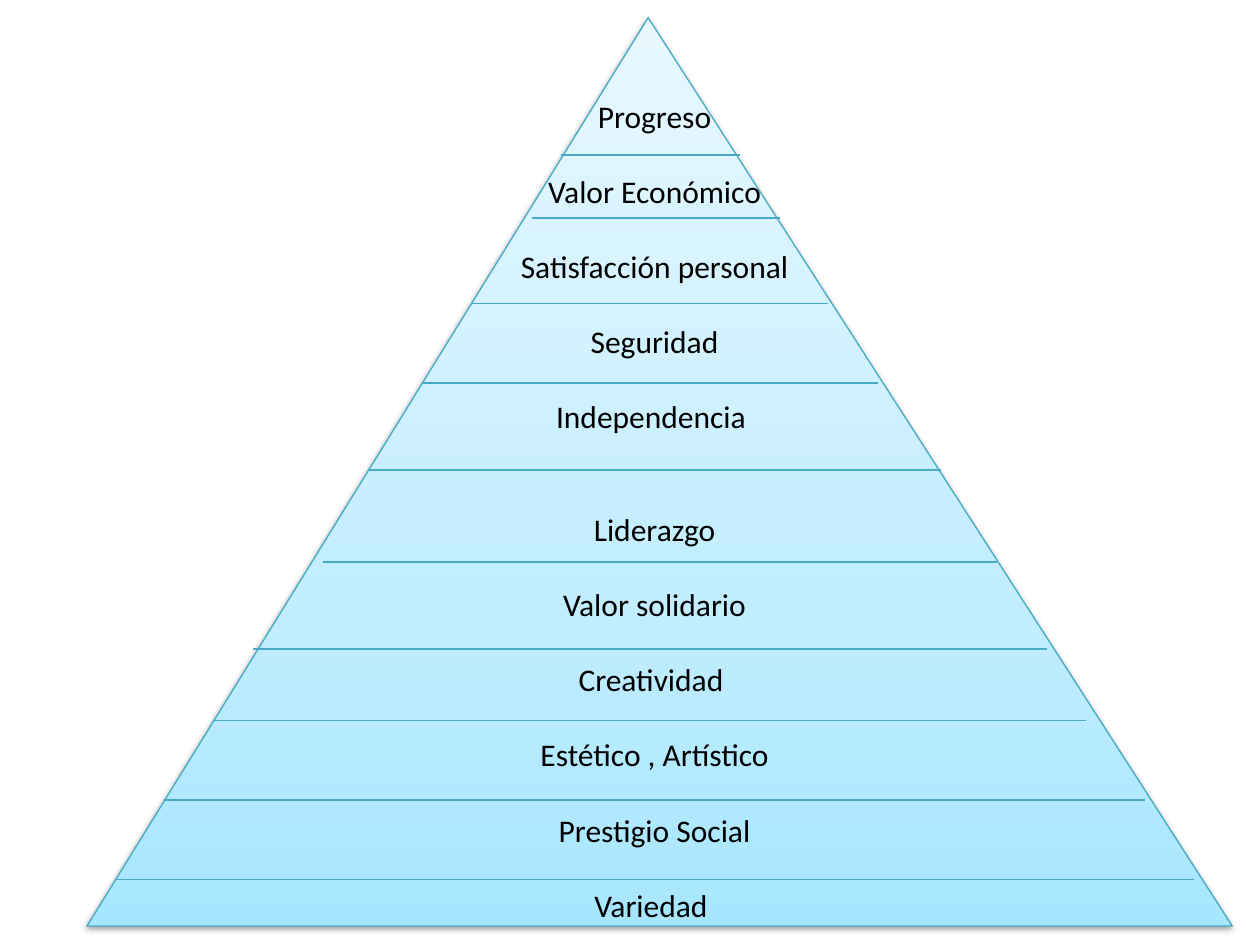
"""Build a slide with a pyramid of eleven ranked values."""
import copy

import pptx
import pptx.dml.color
import pptx.enum.shapes
import pptx.enum.text
import pptx.oxml
import pptx.oxml.ns
import pptx.oxml.xmlchemy
import pptx.util

Inches, Pt = pptx.util.Inches, pptx.util.Pt
RGB = pptx.dml.color.RGBColor.from_string
qn = pptx.oxml.ns.qn

THEME = {
    "font": "Calibri",
    "size": Pt(18),
    "text": RGB("000000"),
    "line": RGB("46AAC5"),
    "width": Pt(0.75),
    "stops": [(0, RGB("A7E6FF")), (0.35, RGB("C1EDFF")), (1, RGB("E7F8FF"))],
}
LABELS = [
    "Progreso", "Valor Económico", "Satisfacción personal", "Seguridad",
    "Independencia ", "Liderazgo", "Valor solidario", "Creatividad ",
    "Estético , Artístico", "Prestigio Social", "Variedad ",
]
DIVIDERS = [
    (4.45, 5.87, 1.23), (4.22, 6.19, 1.73), (3.74, 6.57, 2.41),
    (3.35, 6.97, 3.04), (2.92, 7.47, 3.73), (2.56, 7.91, 4.46),
    (2.01, 8.31, 5.15), (1.69, 8.62, 5.72), (1.3, 9.09, 6.35),
    (0.91, 9.48, 6.98),
]
SHADOW = (
    '<a:effectLst xmlns:a="http://schemas.openxmlformats.org/drawingml/2006/main">'
    '<a:outerShdw blurRad="40000" dist="20000" dir="5400000" rotWithShape="0">'
    '<a:srgbClr val="000000"><a:alpha val="38000"/></a:srgbClr>'
    "</a:outerShdw></a:effectLst>"
)


def style_line(line):
    line.color.rgb = THEME["line"]
    line.width = THEME["width"]


prs = pptx.Presentation()
prs.slide_width, prs.slide_height = Inches(10), Inches(7.5)
s = prs.slides.add_slide(prs.slide_layouts[6])

pyramid = s.shapes.add_shape(
    pptx.enum.shapes.MSO_SHAPE.ISOSCELES_TRIANGLE,
    Inches(0.69), Inches(0.14), Inches(9.09), Inches(7.21))
pyramid.adjustments[0] = 0.49
pyramid.fill.gradient()
pyramid.fill.gradient_angle = 90
stop_list = pyramid._element.spPr.find(qn("a:gradFill")).find(qn("a:gsLst"))
stop_list.append(copy.deepcopy(stop_list[0]))
for stop, (position, color) in zip(pyramid.fill.gradient_stops, THEME["stops"]):
    stop.position = position
    stop.color.rgb = color
style_line(pyramid.line)
pyramid._element.spPr.append(pptx.oxml.parse_xml(SHADOW))

for left, right, y in DIVIDERS:
    divider = s.shapes.add_connector(
        pptx.enum.shapes.MSO_CONNECTOR.STRAIGHT,
        Inches(left), Inches(y), Inches(right), Inches(y))
    style_line(divider.line)
    divider._element.spPr.append(pptx.oxml.xmlchemy.OxmlElement("a:effectLst"))

box = s.shapes.add_textbox(Inches(2.92), Inches(0.77), Inches(4.55), Inches(6.58))
tf = box.text_frame
tf.word_wrap = True
tf.margin_top = tf.margin_bottom = 0
tf.text = "\n".join(LABELS)
for i, p in enumerate(tf.paragraphs):
    p.alignment = pptx.enum.text.PP_ALIGN.CENTER
    if i:
        p.space_before = Pt(43 if p.text == "Liderazgo" else 21.3)
    font = p.runs[0].font
    font.name, font.size = THEME["font"], THEME["size"]
    font.color.rgb = THEME["text"]

prs.save("out.pptx")
